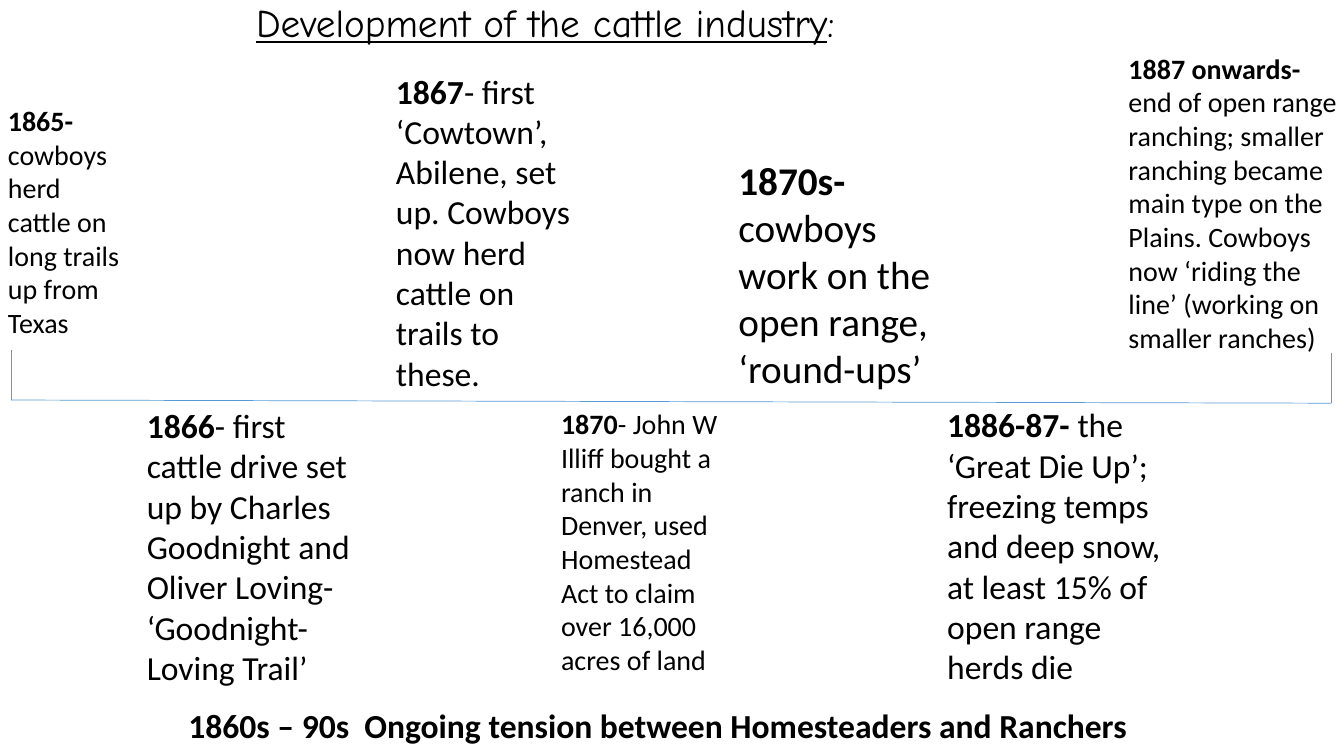
from lxml import etree
from pptx import Presentation
from pptx.dml.color import RGBColor
from pptx.enum.shapes import MSO_CONNECTOR
from pptx.enum.text import MSO_ANCHOR, MSO_AUTO_SIZE, PP_ALIGN
from pptx.oxml.ns import qn
from pptx.util import Cm, Pt

BLACK = RGBColor(0x00, 0x00, 0x00)
BLUE = RGBColor(0x5B, 0x9B, 0xD5)
STRAIGHT = MSO_CONNECTOR.STRAIGHT
TOP = MSO_ANCHOR.TOP
NO_AUTOFIT = MSO_AUTO_SIZE.NONE
LEFT = PP_ALIGN.LEFT
TITLE_ONLY = 5

AXIS_START = (0.28, 10.08)
AXIS_END = (33.55, 10.16)
TICK_HEIGHT = 1.27

EVENTS = [
    ((-0.05, 2.49, 3.56, 6.25), 20, "1865- ",
     "cowboys herd cattle on long trails up from Texas"),
    ((3.45, 10.08, 5.99, 7.44), 24, "1866",
     "- first cattle drive set up by Charles Goodnight and Oliver Loving- "
     "‘Goodnight-Loving Trail’"),
    ((9.73, 1.65, 5.23, 8.46), 24, "1867",
     "- first ‘Cowtown’, Abilene, set up. Cowboys now herd cattle on trails "
     "to these."),
    ((13.89, 10.13, 4.72, 7.09), 20, "1870",
     "- John W Illiff bought a ranch in Denver, used Homestead Act to claim "
     "over 16,000 acres of land"),
    ((18.36, 3.81, 5.64, 6.25), 28, "1870s- ",
     "cowboys work on the open range, ‘round-ups’"),
    ((23.62, 10.06, 6.27, 7.44), 24, "1886-87- ",
     "the ‘Great Die Up’; freezing temps and deep snow, at least 15% of open "
     "range herds die"),
    ((28.19, 1.17, 6.02, 7.95), 20, "1887 onwards- ",
     "end of open range ranching; smaller ranching became main type on the "
     "Plains. Cowboys now ‘riding the line’ (working on smaller ranches)"),
]


def style_paragraph(para, font_name, size):
    """Left-align a paragraph and set its font."""
    para.alignment = LEFT
    para.font.name = font_name
    para.font.size = Pt(size)
    para.font.color.rgb = BLACK


def add_span(para, text):
    """Append a run and return its font."""
    span = para.add_run()
    span.text = text
    return span.font


def add_title(page):
    """Place and format the underlined slide title."""
    title = page.shapes.title
    title.left, title.top = Cm(6.2), Cm(-0.18)
    title.width, title.height = Cm(27.05), Cm(1.45)
    frame = title.text_frame
    frame.vertical_anchor = TOP
    frame.auto_size = NO_AUTOFIT
    para = frame.paragraphs[0]
    style_paragraph(para, "Comic Neue", 28)
    add_span(para, "Development of the cattle industry").underline = True
    add_span(para, ":")


def add_note(page, bounds, size, bold_text, plain_text=""):
    """Add a wrapped text box that opens in bold."""
    box = page.shapes.add_textbox(*map(Cm, bounds))
    box.text_frame.word_wrap = True
    para = box.text_frame.paragraphs[0]
    style_paragraph(para, "Calibri", size)
    add_span(para, bold_text).bold = True
    if plain_text:
        add_span(para, plain_text)


def add_line(page, start, end):
    """Draw a thin blue line without a shadow."""
    line = page.shapes.add_connector(STRAIGHT, *map(Cm, start + end))
    line.line.color.rgb = BLUE
    line.line.width = Pt(0.5)
    etree.SubElement(line._element.spPr, qn("a:effectLst"))


def add_timeline(page):
    """Draw the time axis with an upright tick at each end."""
    add_line(page, AXIS_START, AXIS_END)
    for x, y in (AXIS_START, AXIS_END):
        add_line(page, (x, y), (x, y - TICK_HEIGHT))


def main():
    """Build the cattle industry timeline and save it."""
    deck = Presentation()
    deck.slide_width, deck.slide_height = Cm(33.87), Cm(19.05)
    page = deck.slides.add_slide(deck.slide_layouts[TITLE_ONLY])
    add_title(page)
    add_timeline(page)
    for event in EVENTS:
        add_note(page, *event)
    add_note(page, (4.5, 17.65, 24.23, 1.27), 24,
             "1860s – 90s  Ongoing tension between Homesteaders and Ranchers")
    deck.save("out.pptx")


if __name__ == "__main__":
    main()
